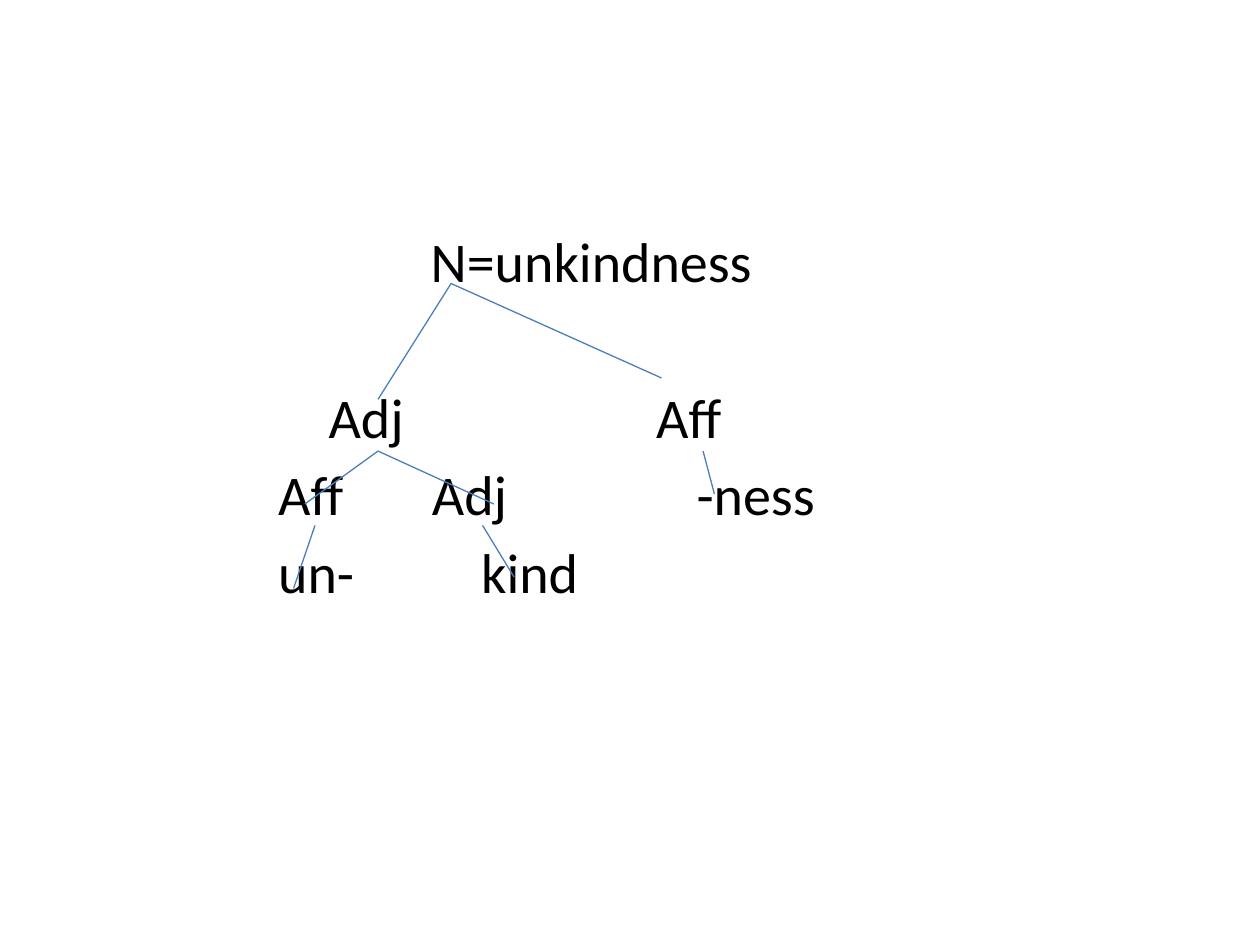
import pptx
import pptx.util
import pptx.dml.color
import pptx.enum.shapes
import pptx.oxml.ns
from lxml import etree
from pptx.util import Inches, Pt

WORD_LEVELS = [
    (5.8, [("N=unkindness", 2.82)]),
    (50.6, [("Adj", 2.01), ("Aff", 4.61)]),
    (5.8, [("Aff", 1.61), ("Adj", 2.83), ("-ness", 4.93)]),
    (5.8, [("un-", 1.61), ("kind", 3.22)]),
]
BRANCHES = [
    ((3.58, 2.25), [(3, 3.17), (5.25, 3)]),
    ((3, 3.58), [(2.42, 4), (3.92, 4)]),
    ((5.58, 3.58), [(5.67, 3.92)]),
    ((2.5, 4.17), [(2.33, 4.67)]),
    ((3.83, 4.17), [(4.08, 4.58)]),
]


def color(hex_value):
    return pptx.dml.color.RGBColor.from_string(hex_value)


def add_child(parent, tag, **attributes):
    return etree.SubElement(parent, pptx.oxml.ns.qn(tag), **attributes)


def add_words(slide):
    tree_text = slide.shapes.add_textbox(
        Inches(0.5), Inches(1.75), Inches(9), Inches(4.95)
    ).text_frame
    tree_text.word_wrap = True
    for index, (space_before, words) in enumerate(WORD_LEVELS):
        level = tree_text.add_paragraph() if index else tree_text.paragraphs[0]
        level.text = "".join("\t" + word for word, _ in words)
        level.space_before = Pt(space_before)
        level.font.name = "Calibri"
        level.font.size = Pt(32)
        level.font.color.rgb = color("000000")
        properties = level._p.get_or_add_pPr()
        tab_stops = etree.Element(pptx.oxml.ns.qn("a:tabLst"))
        properties.find(pptx.oxml.ns.qn("a:defRPr")).addprevious(tab_stops)
        for _, left in words:
            add_child(tab_stops, "a:tab", pos=str(Inches(left)), algn="l")


def add_branches(slide):
    for parent, children in BRANCHES:
        for child in children:
            branch = slide.shapes.add_connector(
                pptx.enum.shapes.MSO_CONNECTOR.STRAIGHT,
                *(Inches(value) for value in parent + child),
            )
            branch.line.color.rgb = color("4B7EBC")
            branch.line.width = Pt(0.75)
            add_child(branch._element.spPr, "a:effectLst")


def main():
    presentation = pptx.Presentation()
    presentation.slide_width = Inches(10)
    presentation.slide_height = Inches(7.5)
    slide = presentation.slides.add_slide(presentation.slide_layouts[6])
    add_words(slide)
    add_branches(slide)
    presentation.save("out.pptx")


if __name__ == "__main__":
    main()
